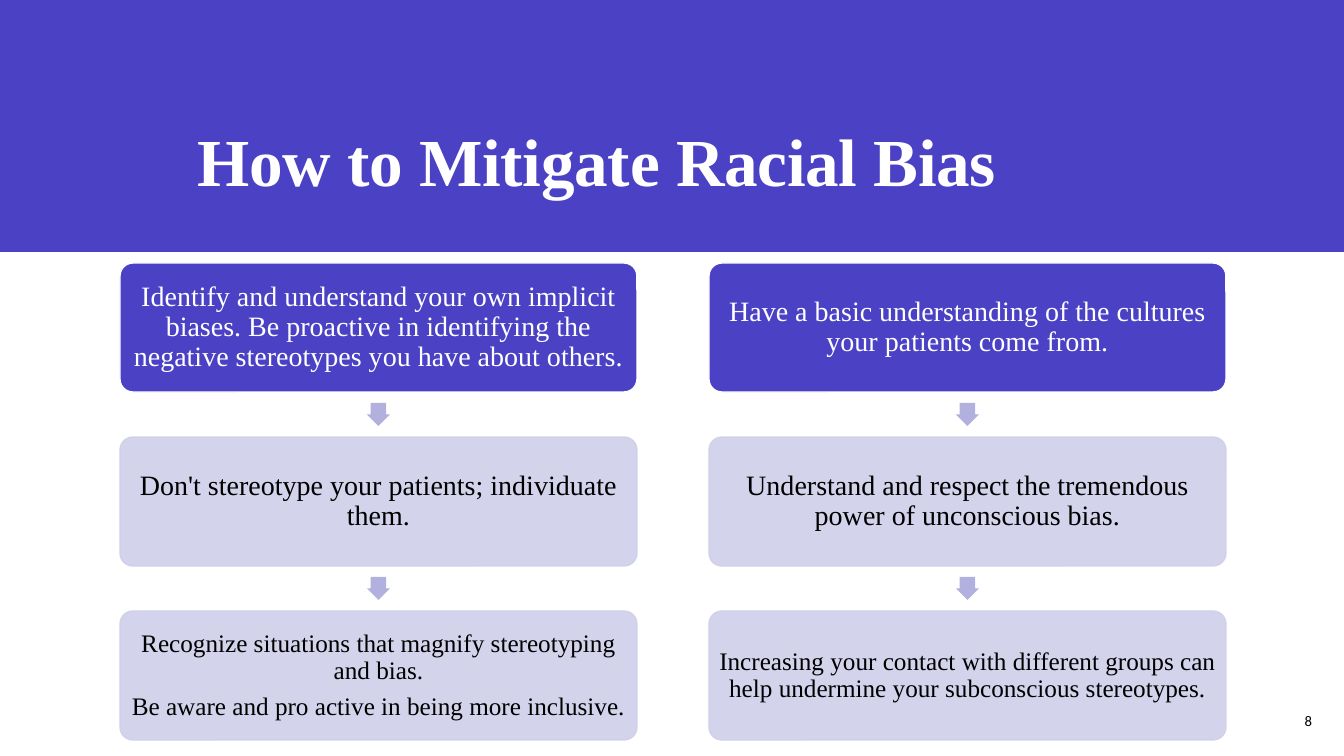
from dataclasses import dataclass

from pptx import Presentation
from pptx import util as u
from pptx.dml.color import RGBColor
from pptx.enum import shapes, text
from pptx.oxml import parse_xml
from pptx.oxml.ns import nsdecls, qn

TITLE = "How to Mitigate Racial Bias"
SLIDE_NUMBER = "8"
COLUMNS = [
    [
        ["Identify and understand your own implicit biases. Be proactive in identifying the negative stereotypes you have about others."],
        ["Don't stereotype your patients; individuate them."],
        [
            "Recognize situations that magnify stereotyping and bias.",
            "Be aware and pro active in being more inclusive.",
        ],
    ],
    [
        ["Have a basic understanding of the cultures your patients come from."],
        ["Understand and respect the tremendous power of unconscious bias."],
        ["Increasing your contact with different groups can help undermine your subconscious stereotypes."],
    ],
]


@dataclass(frozen=True)
class Theme:
    indigo: RGBColor = RGBColor.from_string("4A41C5")
    lavender: RGBColor = RGBColor.from_string("D0CFEA")
    arrow: RGBColor = RGBColor.from_string("B2B0DF")
    white: RGBColor = RGBColor.from_string("FFFFFF")
    black: RGBColor = RGBColor.from_string("000000")
    serif: str = "Times New Roman"
    sans: str = "Calibri"
    title_size: float = 48
    card_sizes: tuple = (20, 20, 18)
    number_size: float = 10.5


THEME = Theme()
EMU_PER_PX = 914400 / 100.8
SLIDE_WIDTH, SLIDE_HEIGHT = 1344, 756
BAND_HEIGHT = 252
CARD_LEFT, CARD_TOP = 120, 263
CARD_WIDTH, CARD_HEIGHT = 517, 129
COLUMN_STEP, ROW_STEP = 589, 174
ARROW_SIZE = 23
CARD_INSET = 3


def px(value):
    return u.Emu(round(value * EMU_PER_PX))


def add_shape(slide, kind, box, fill):
    shape = slide.shapes.add_shape(kind, *map(px, box))
    shape.shadow.inherit = False
    shape.fill.solid()
    shape.fill.fore_color.rgb = fill
    shape.line.fill.background()
    return shape


def write(shape, lines, size, color, font, align, anchor, spacing=None):
    frame = shape.text_frame
    frame.word_wrap = True
    frame.vertical_anchor = anchor
    frame.text = "\n".join(lines)
    for index, paragraph in enumerate(frame.paragraphs):
        paragraph.alignment = align
        paragraph.line_spacing = spacing
        if index:
            paragraph.space_before = u.Pt(6.3)
        paragraph.font.size = u.Pt(size)
        paragraph.font.name = font
        paragraph.font.color.rgb = color


def add_title(slide):
    title = slide.shapes.title
    title.left, title.top, title.width, title.height = map(px, (72, 40, 1050, 166))
    write(title, [TITLE], THEME.title_size, THEME.white, THEME.serif,
          text.PP_ALIGN.CENTER, text.MSO_ANCHOR.BOTTOM, 0.9)
    title.text_frame.paragraphs[0].font.bold = True
    for properties in title.element.iter(qn("a:defRPr")):
        properties.set("spc", "-20")
    band = add_shape(slide, shapes.MSO_SHAPE.RECTANGLE,
                     (0, 0, SLIDE_WIDTH, BAND_HEIGHT), THEME.indigo)
    title.element.addprevious(band.element)


def add_card(slide, left, top, lines, size, leading):
    fill, border, ink = (
        (THEME.indigo, THEME.white, THEME.white) if leading
        else (THEME.lavender, THEME.lavender, THEME.black)
    )
    card = add_shape(slide, shapes.MSO_SHAPE.ROUNDED_RECTANGLE,
                     (left, top, CARD_WIDTH, CARD_HEIGHT), fill)
    card.adjustments[0] = 0.1
    card.line.color.rgb = border
    card.line.width = u.Pt(1)
    if not leading:
        for color in card.element.spPr.iter(qn("a:srgbClr")):
            color.append(parse_xml(f'<a:alpha {nsdecls("a")} val="90000"/>'))
    frame = card.text_frame
    frame.margin_left = frame.margin_right = px(CARD_INSET)
    frame.margin_top = frame.margin_bottom = px(CARD_INSET)
    write(card, lines, size, ink, THEME.serif,
          text.PP_ALIGN.CENTER, text.MSO_ANCHOR.MIDDLE, 0.9)


def add_arrow(slide, left, card_bottom):
    gap = ROW_STEP - CARD_HEIGHT
    box = (left + (CARD_WIDTH - ARROW_SIZE) / 2,
           card_bottom + (gap - ARROW_SIZE) / 2, ARROW_SIZE, ARROW_SIZE)
    arrow = add_shape(slide, shapes.MSO_SHAPE.DOWN_ARROW, box, THEME.arrow)
    arrow.adjustments[0] = 0.67
    arrow.adjustments[1] = 0.5


def add_columns(slide):
    for column, cards in enumerate(COLUMNS):
        left = CARD_LEFT + column * COLUMN_STEP
        for row, (lines, size) in enumerate(zip(cards, THEME.card_sizes)):
            top = CARD_TOP + row * ROW_STEP
            add_card(slide, left, top, lines, size, leading=row == 0)
            if row < len(cards) - 1:
                add_arrow(slide, left, top + CARD_HEIGHT)


def add_slide_number(slide):
    number = slide.shapes.add_textbox(*map(px, (1253, 701, 69, 40)))
    write(number, [SLIDE_NUMBER], THEME.number_size, THEME.black, THEME.sans,
          text.PP_ALIGN.RIGHT, text.MSO_ANCHOR.MIDDLE)


def main():
    presentation = Presentation()
    presentation.slide_width = px(SLIDE_WIDTH)
    presentation.slide_height = px(SLIDE_HEIGHT)
    slide = presentation.slides.add_slide(presentation.slide_layouts[5])
    add_title(slide)
    add_columns(slide)
    add_slide_number(slide)
    presentation.save("out.pptx")


if __name__ == "__main__":
    main()
